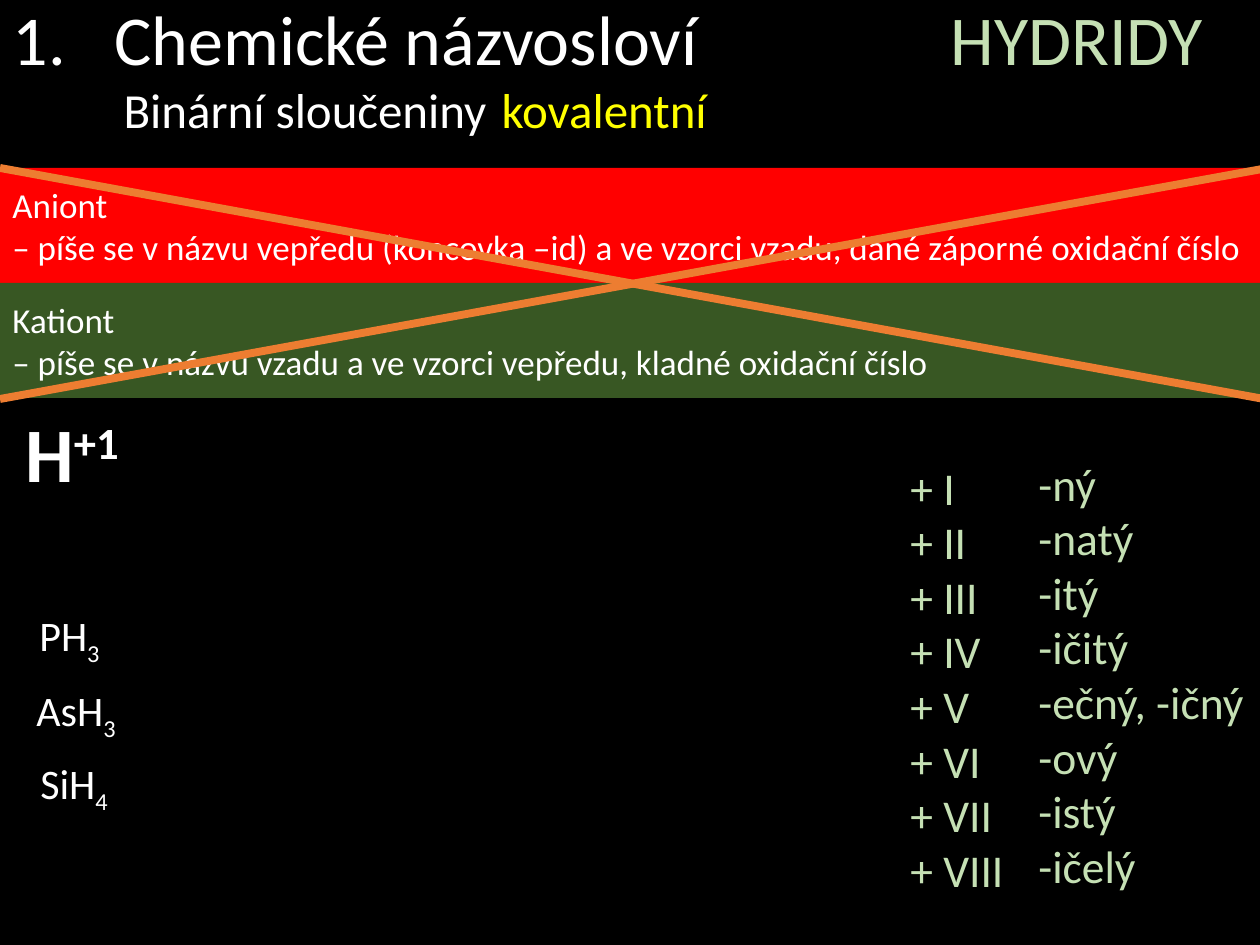
from pptx import Presentation
from pptx.dml.color import RGBColor
from pptx.enum.shapes import MSO_CONNECTOR, MSO_SHAPE
from pptx.enum.text import MSO_ANCHOR, MSO_AUTO_SIZE, PP_ALIGN
from pptx.oxml.ns import qn
from pptx.util import Pt
from lxml import etree

RECT, STRAIGHT = MSO_SHAPE.RECTANGLE, MSO_CONNECTOR.STRAIGHT
MIDDLE, LEFT, NO_FIT = MSO_ANCHOR.MIDDLE, PP_ALIGN.LEFT, MSO_AUTO_SIZE.NONE
PX = 914400 // 126
BLACK, WHITE, GREEN = "000000", "FFFFFF", "C5E0B4"


def rgb(value):
    return RGBColor.from_string(value)


def add_block(x, y, w, h, fill, lines, size, color=WHITE):
    """Rectangle with left-aligned text; each line is a list of (text, baseline)."""
    sp = s.shapes.add_shape(RECT, x * PX, y * PX, w * PX, h * PX)
    sp.shadow.inherit = False
    sp.line.fill.background()
    if fill:
        sp.fill.solid()
        sp.fill.fore_color.rgb = rgb(fill)
    else:
        sp.fill.background()
    tf = sp.text_frame
    tf.word_wrap = True
    tf.vertical_anchor = MIDDLE
    for i, line in enumerate(lines):
        p = tf.add_paragraph() if i else tf.paragraphs[0]
        p.alignment = LEFT
        p.font.name, p.font.size = "Calibri", Pt(size)
        p.font.color.rgb = rgb(color)
        for text, baseline in line:
            r = p.add_run()
            r.text = text
            r.font.name, r.font.size = "Calibri", Pt(size)
            r.font.color.rgb = rgb(color)
            if baseline:
                r.font._element.set("baseline", str(baseline * 1000))
    return sp


prs = Presentation()
prs.slide_width, prs.slide_height = 1260 * PX, 945 * PX
s = prs.slides.add_slide(prs.slide_layouts[5])
s.background.fill.solid()
s.background.fill.fore_color.rgb = rgb(BLACK)

# Title: two lines, right-hand words placed by tab stops
title = s.shapes.title
title.left, title.top, title.width, title.height = 0, 0, 1260 * PX, 208 * PX
title.fill.solid()
title.fill.fore_color.rgb = rgb(BLACK)
tf = title.text_frame
tf.auto_size = NO_FIT
tf.word_wrap = True
tf.vertical_anchor = MIDDLE
tf.margin_top, tf.margin_bottom = 0, 75 * PX
title_lines = [
    ("Chemické názvosloví", "\tHYDRIDY", GREEN, 40, 102, 938),
    ("Binární sloučeniny", "\tkovalentní", "FFFF00", 28, 111, 949),
]
for i, (left, right, color, size, indent, tab) in enumerate(title_lines):
    p = tf.add_paragraph() if i else tf.paragraphs[0]
    p.alignment = LEFT
    p.line_spacing = 1.0
    p.font.name, p.font.size = "Calibri", Pt(size)
    for text, run_color in ((left, WHITE), (right, color)):
        r = p.add_run()
        r.text = text
        r.font.color.rgb = rgb(run_color)
        r.font.name, r.font.size = "Calibri", Pt(size)
    pPr = p._p.get_or_add_pPr()
    pPr.set("marL", str(indent * PX))
    pPr.set("indent", str(0 if i else -indent * PX))
    tabs = etree.Element(qn("a:tabLst"))
    etree.SubElement(tabs, qn("a:tab"), pos=str(tab * PX), algn="l")
    pPr.find(qn("a:lnSpc")).addnext(tabs)
    if i == 0:
        number = etree.Element(qn("a:buAutoNum"), type="arabicPeriod")
        tabs.addprevious(number)

# Anion and cation bands
bands = [
    (168, "FF0000", "Aniont",
     "– píše se v názvu vepředu (koncovka –id) a ve vzorci vzadu, dané záporné oxidační číslo"),
    (283, "385723", "Kationt",
     "– píše se v názvu vzadu a ve vzorci vepředu, kladné oxidační číslo"),
]
for y, fill, name, rule in bands:
    add_block(0, y, 1268, 115, fill, [[(name, 0)], [(rule, 0)]], 20)

# Oxidation numbers and their endings
numbers = ["I", "II", "III", "IV", "V", "VI", "VII", "VIII"]
endings = ["-ný", "-natý", "-itý", "-ičitý", "-ečný, -ičný", "-ový", "-istý", "-ičelý"]
add_block(898, 455, 180, 446, BLACK, [[("+ " + n, 0)] for n in numbers], 26, GREEN)
add_block(1026, 451, 234, 446, BLACK, [[(e, 0)] for e in endings], 26, GREEN)

# Hydrogen and the example hydrides
hydrogen = add_block(13, 394, 136, 115, None, [[("H", 0), ("+1", 30)]], 44)
for r in hydrogen.text_frame.paragraphs[0].runs:
    r.font.bold = True
for x, y, element, count in [(28, 743, "SiH", "4"), (27, 595, "PH", "3"), (24, 670, "AsH", "3")]:
    add_block(x, y, 467, 87, BLACK, [[(element, 0), (count, -25)]], 24)

# Cross over the bands
for x2, y1, y2 in [(1264, 168, 399), (1268, 399, 168)]:
    line = s.shapes.add_connector(STRAIGHT, 0, y1 * PX, x2 * PX, y2 * PX)
    line.line.color.rgb = rgb("ED7D31")
    line.line.width = Pt(4.5)
    etree.SubElement(line._element.spPr, qn("a:effectLst"))

prs.save("out.pptx")
